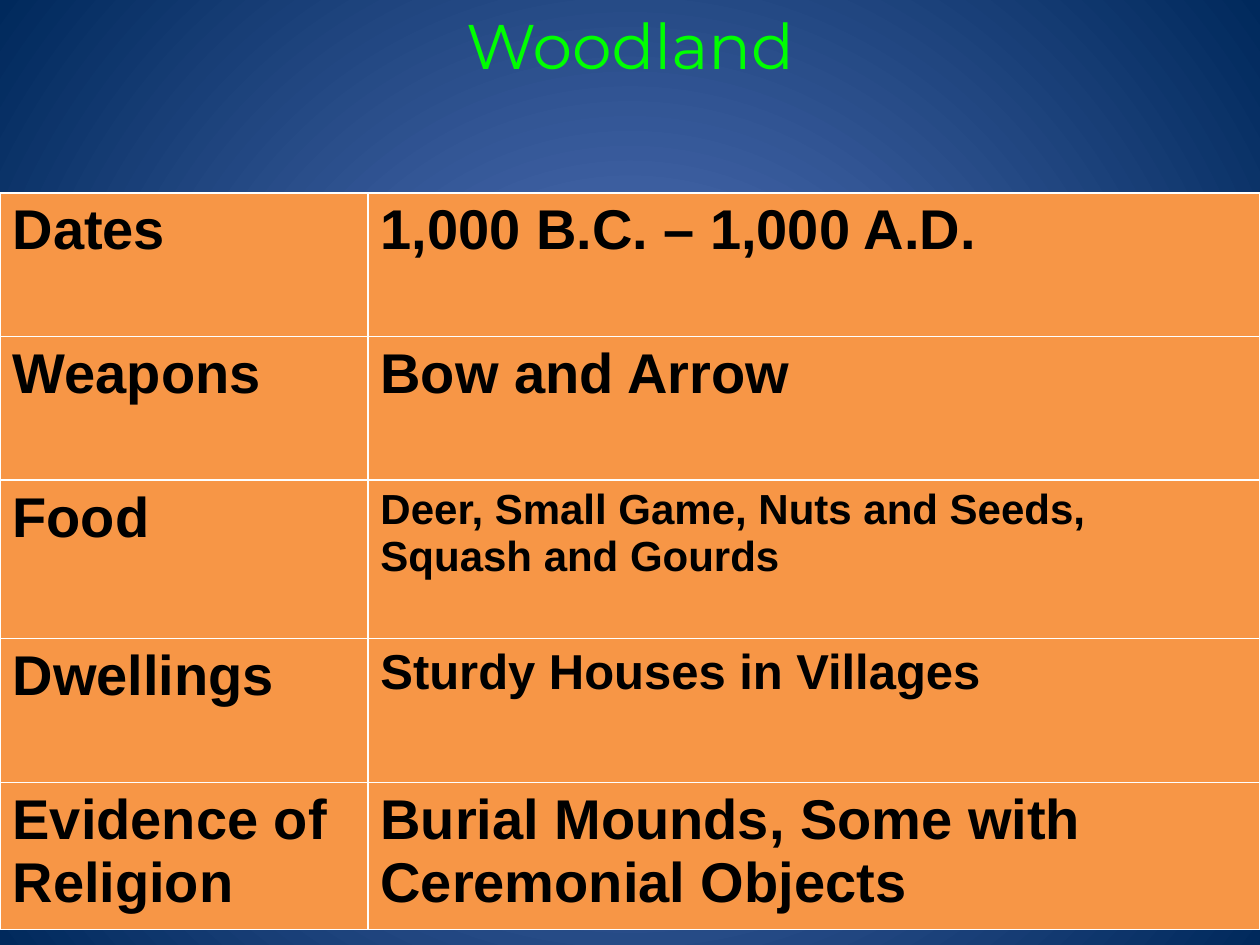
from lxml.etree import SubElement
from pptx import Presentation
from pptx.dml.color import RGBColor
from pptx.enum.text import MSO_ANCHOR, PP_ALIGN
from pptx.oxml.ns import qn
from pptx.util import Inches, Pt

# Content: label, answer, answer size, row height
TITLE = "Woodland"
ROWS = [
    ("Dates", "1,000 B.C. – 1,000 A.D.", "large", 1.14),
    ("Weapons", "Bow and Arrow", "large", 1.14),
    ("Food", "Deer, Small Game, Nuts and Seeds, Squash and Gourds", "small", 1.26),
    ("Dwellings", "Sturdy Houses in Villages", "medium", 1.14),
    ("Evidence of Religion", "Burial Mounds, Some with Ceremonial Objects", "large", 1.17),
]
COL_WIDTHS = (2.92, 7.08)
TABLE_TOP = 1.53

THEME = {
    "glow": "5E7CC5", "edge": "00295C", "title": "00FF00", "outline": "000000",
    "text": "000000", "cell": "F79646", "border": "FFFFFF",
    "title_font": "Montserrat", "body_font": "Arial",
    "title_size": 36, "large": 32, "medium": 28, "small": 24,
}


def color(name):
    return RGBColor.from_string(THEME[name])


def write(tf, text, size="large", font="body_font", fill="text", bold=False, align=None):
    p = tf.paragraphs[0]
    p.alignment = align
    r = p.add_run()
    r.text = text
    r.font.name = THEME[font]
    r.font.size = Pt(THEME[size])
    r.font.bold = bold
    r.font.color.rgb = color(fill)
    return r


def add_line(parent, tag, name, width):
    ln = SubElement(parent, qn(tag), w=str(Pt(width)))
    fill = SubElement(ln, qn("a:solidFill"))
    SubElement(fill, qn("a:srgbClr"), val=THEME[name])
    return ln


def set_background(s):
    fill = s.background.fill
    fill.gradient()
    for stop, name, position in zip(fill.gradient_stops, ("glow", "edge"), (0, 1)):
        stop.color.rgb = color(name)
        stop.position = position
    grad = s._element.find(".//" + qn("a:gradFill"))
    grad.remove(grad.find(qn("a:lin")))
    circle = SubElement(grad, qn("a:path"), path="circle")
    SubElement(circle, qn("a:fillToRect"), l="50000", t="50000", r="50000", b="50000")


def add_title(s):
    tf = s.shapes.add_textbox(0, 0, Inches(10), Inches(1.46)).text_frame
    tf.word_wrap = True
    tf.vertical_anchor = MSO_ANCHOR.TOP
    r = write(tf, TITLE, size="title_size", font="title_font", fill="title",
              align=PP_ALIGN.CENTER)
    rPr = r.font._element
    rPr.insert(0, add_line(rPr, "a:ln", "outline", 0.75))


def style_cell(cell):
    tcPr = cell._tc.get_or_add_tcPr()
    for side in "LRTB":
        add_line(tcPr, f"a:ln{side}", "border", 1)
    cell.fill.solid()
    cell.fill.fore_color.rgb = color("cell")


def add_facts(s):
    height = sum(row[-1] for row in ROWS)
    table = s.shapes.add_table(len(ROWS), len(COL_WIDTHS), 0, Inches(TABLE_TOP),
                               Inches(sum(COL_WIDTHS)), Inches(height)).table
    table.first_row = table.horz_banding = False
    for col, width in zip(table.columns, COL_WIDTHS):
        col.width = Inches(width)
    for row, (label, answer, size, row_height) in zip(table.rows, ROWS):
        row.height = Inches(row_height)
        for cell, text, cell_size in zip(row.cells, (label, answer), ("large", size)):
            style_cell(cell)
            write(cell.text_frame, text, size=cell_size, bold=True)


prs = Presentation()
prs.slide_width, prs.slide_height = Inches(10), Inches(7.5)
s = prs.slides.add_slide(prs.slide_layouts[6])
set_background(s)
add_title(s)
add_facts(s)
prs.save("out.pptx")
